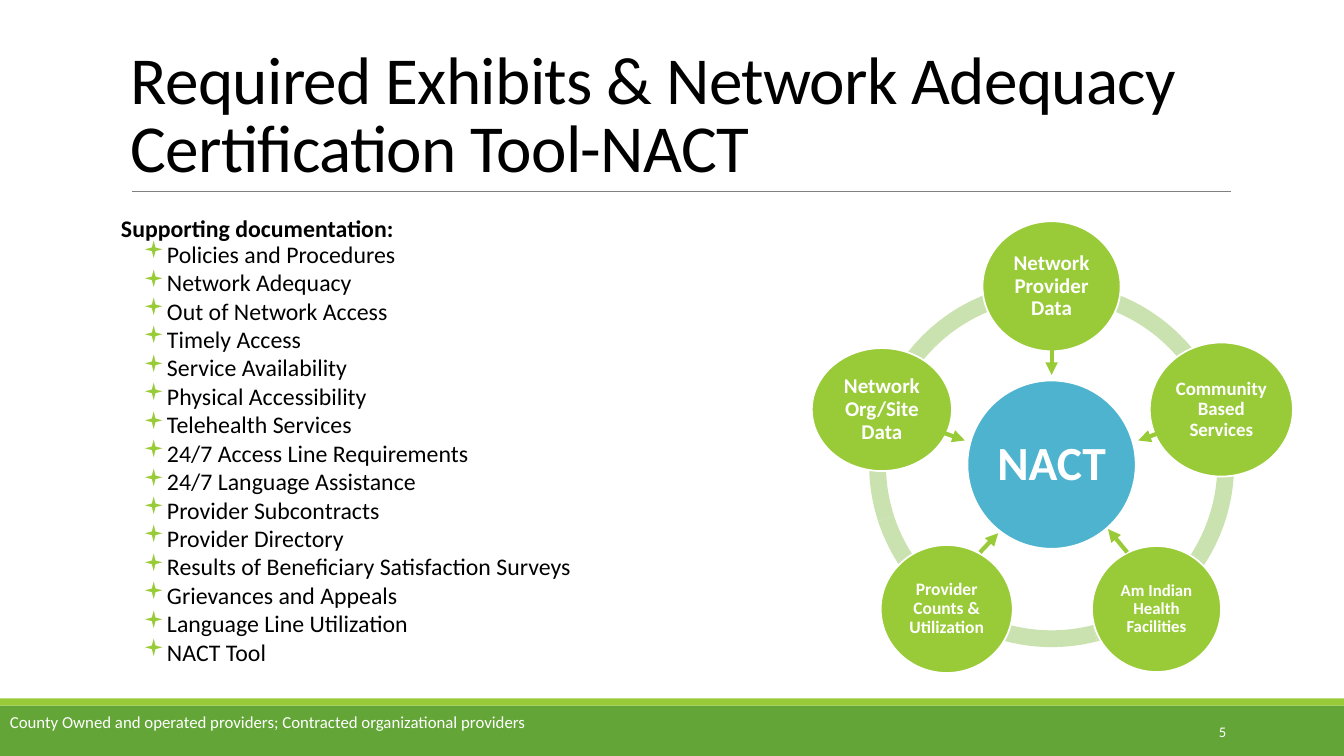
from math import cos, radians, sin

from lxml.etree import SubElement
from pptx import Presentation
from pptx.dml.color import RGBColor
from pptx.enum.shapes import MSO_CONNECTOR, MSO_SHAPE
from pptx.enum.text import MSO_ANCHOR, PP_ALIGN
from pptx.oxml.ns import qn
from pptx.util import Inches, Pt

COLORS = {
    "black": "000000", "white": "FFFFFF", "rule": "808080", "lime": "99CB38",
    "green": "63A537", "ring": "CAE2AF", "hub": "4EB3CF",
}
FONT = "Calibri"
TITLE = "Required Exhibits & Network Adequacy Certification Tool-NACT"
DOCUMENTS = [
    "Policies and Procedures", "Network Adequacy", "Out of Network Access",
    "Timely Access", "Service Availability", "Physical Accessibility",
    "Telehealth Services", "24/7 Access Line Requirements",
    "24/7 Language Assistance", "Provider Subcontracts", "Provider Directory",
    "Results of Beneficiary Satisfaction Surveys", "Grievances and Appeals",
    "Language Line Utilization", "NACT Tool",
]
# Label, font size, width, height; clockwise from the top
NODES = [
    ("Network Provider Data", 15, 1.37, 1.29),
    ("Community Based Services", 13.5, 1.42, 1.33),
    ("Am Indian Health Facilities", 12, 1.28, 1.25),
    ("Provider Counts & Utilization", 12.5, 1.31, 1.27),
    ("Network Org/Site Data", 15, 1.39, 1.22),
]
# Start and end of each arrow, measured from the hub's centre
ARROWS = [
    (0, -1.16, 0, -0.89), (1.11, -0.33, 0.86, -0.24), (0.75, 0.87, 0.56, 0.64),
    (-0.71, 0.87, -0.53, 0.68), (-1.11, -0.33, -0.86, -0.24),
]
ARC_BOUNDS = [32.4, 75.6, 118.8, 162, 205.2]


def rgb(name):
    return RGBColor.from_string(COLORS[name])


def add_run(p, text, size, color, bold=False):
    r = p.add_run()
    r.text = text
    r.font.name = FONT
    r.font.size = Pt(size)
    r.font.bold = bold
    r.font.color.rgb = rgb(color)
    return r


def add_text_frame(slide, box, anchor=MSO_ANCHOR.TOP):
    tf = slide.shapes.add_textbox(*map(Inches, box)).text_frame
    tf.word_wrap = True
    tf.vertical_anchor = anchor
    return tf


def add_filled(slide, kind, box, fill, line=None):
    sp = slide.shapes.add_shape(kind, *map(Inches, box))
    sp.shadow.inherit = False
    sp.fill.solid()
    sp.fill.fore_color.rgb = rgb(fill)
    if line:
        sp.line.color.rgb = rgb(line)
        sp.line.width = Pt(1.25)
    else:
        sp.line.fill.background()
    return sp


def add_line(slide, points, color, width, arrow=False):
    line = slide.shapes.add_connector(MSO_CONNECTOR.STRAIGHT, *map(Inches, points))
    line.line.color.rgb = rgb(color)
    line.line.width = Pt(width)
    if arrow:
        SubElement(line.line._get_or_add_ln(), qn("a:tailEnd"), type="triangle")
    SubElement(line._element.spPr, qn("a:effectLst"))


def add_disc(slide, cx, cy, width, height, fill, label, size):
    """Place a labelled ellipse around its centre."""
    box = (cx - width / 2, cy - height / 2, width, height)
    sp = add_filled(slide, MSO_SHAPE.OVAL, box, fill, "white")
    tf = sp.text_frame
    tf.word_wrap = True
    tf.vertical_anchor = MSO_ANCHOR.MIDDLE
    tf.margin_left = tf.margin_right = tf.margin_top = tf.margin_bottom = Inches(0.02)
    p = tf.paragraphs[0]
    p.alignment = PP_ALIGN.CENTER
    p.line_spacing = 0.9
    add_run(p, label, size, "white", bold=True)


def add_title(slide, left, top, width, height):
    tf = add_text_frame(slide, (left, top, width, height), MSO_ANCHOR.BOTTOM)
    p = tf.paragraphs[0]
    p.line_spacing = 0.85
    r = add_run(p, TITLE, 48, "black")
    r.font._element.set("spc", "-50")
    bottom = top + height
    add_line(slide, (left + 0.11, bottom, left + width + 0.01, bottom), "rule", 0.5)


def add_bullet(p):
    pPr = p._p.get_or_add_pPr()
    pPr.set("marL", str(Inches(0.42)))
    pPr.set("indent", str(Inches(-0.2)))
    SubElement(SubElement(pPr, qn("a:buClr")), qn("a:srgbClr"), val=COLORS["lime"])
    SubElement(pPr, qn("a:buFont"), typeface="Wingdings")
    SubElement(pPr, qn("a:buChar"), char="▪")


def add_documents(slide, box):
    tf = add_text_frame(slide, box)
    tf.margin_left = tf.margin_right = 0
    p = tf.paragraphs[0]
    p.line_spacing, p.space_before, p.space_after = 0.7, Pt(12), Pt(2)
    add_run(p, "Supporting documentation:", 17, "black", bold=True)
    for document in DOCUMENTS:
        p = tf.add_paragraph()
        p.level = 1
        p.line_spacing, p.space_before, p.space_after = 0.7, Pt(2), Pt(4)
        add_bullet(p)
        add_run(p, document, 17, "black")


def add_wheel(slide, left, top, size):
    """Draw the ring, the hub and the nodes spaced evenly around it."""
    cx, cy = left + size / 2, top + size / 2
    for start, end in zip(ARC_BOUNDS, ARC_BOUNDS[1:] + ARC_BOUNDS[:1]):
        arc = add_filled(slide, MSO_SHAPE.BLOCK_ARC, (left, top, size, size), "ring")
        # Angles are stored in 1/60000 degree, adjustments in 1/100000
        arc.adjustments[0] = start * 0.6
        arc.adjustments[1] = end * 0.6
        arc.adjustments[2] = 0.046
    add_disc(slide, cx, cy, 1.67, 1.67, "hub", "NACT", 34)
    radius = 1.77
    for i, (label, font_size, width, height) in enumerate(NODES):
        angle = radians(i * 360 / len(NODES))
        add_disc(slide, cx + radius * sin(angle), cy - radius * cos(angle),
                 width, height, "lime", label, font_size)
    for x1, y1, x2, y2 in ARROWS:
        add_line(slide, (cx + x1, cy + y1, cx + x2, cy + y2), "lime", 3, arrow=True)


def add_footer(slide, left, top, width, height):
    stripe = 0.07
    add_filled(slide, MSO_SHAPE.RECTANGLE,
               (left, top + stripe, width, height - stripe), "green")
    add_filled(slide, MSO_SHAPE.RECTANGLE, (left, top, width, stripe), "lime")
    note = add_text_frame(slide, (left, top + 0.08, 6.73, 0.5))
    add_run(note.paragraphs[0],
            "County Owned and operated providers; Contracted organizational providers",
            12, "white")
    number = add_text_frame(slide, (left + 10.83, top + 0.13, 1.43, 0.4),
                            MSO_ANCHOR.MIDDLE)
    number.paragraphs[0].alignment = PP_ALIGN.RIGHT
    add_run(number.paragraphs[0], "5", 10.5, "white")


def main():
    prs = Presentation()
    prs.slide_width, prs.slide_height = Inches(13.33), Inches(7.5)
    slide = prs.slides.add_slide(prs.slide_layouts[6])
    add_footer(slide, 0, 6.93, 13.33, 0.57)
    add_title(slide, 1.2, 0.31, 11, 1.59)
    add_documents(slide, (1.2, 2.15, 6.45, 4.75))
    add_wheel(slide, 8.62, 2.8, 3.62)
    prs.save("out.pptx")


if __name__ == "__main__":
    main()
